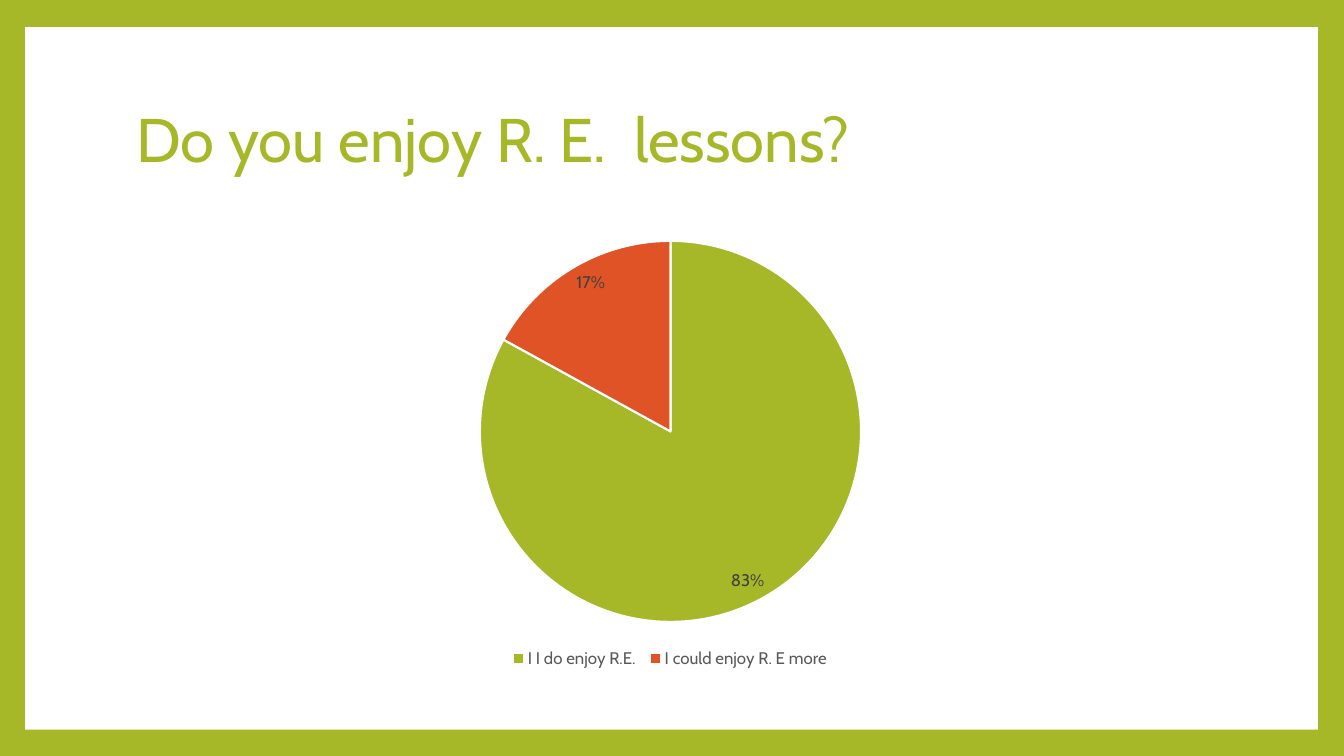
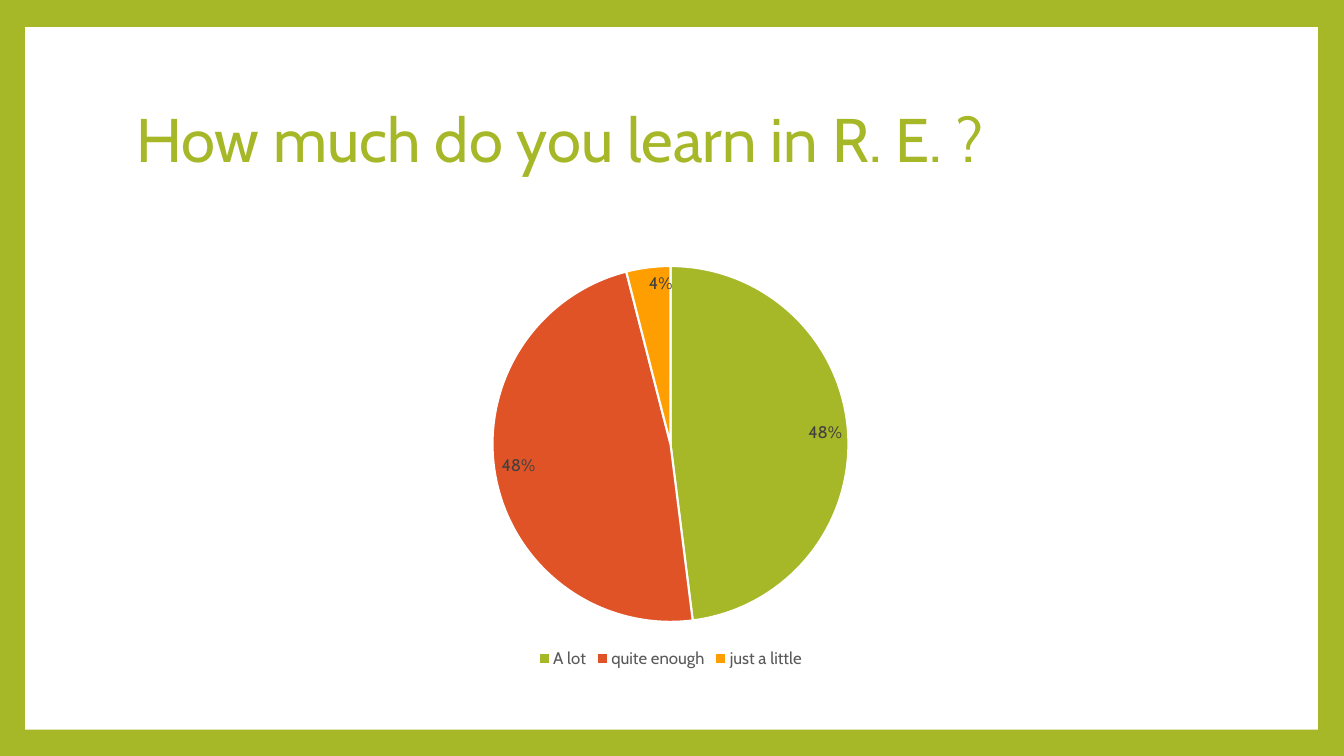
from dataclasses import dataclass

from lxml.etree import SubElement
from pptx import Presentation
from pptx.chart.chart import Chart
from pptx.chart.data import CategoryChartData
from pptx.dml.color import RGBColor
from pptx.enum.chart import XL_CHART_TYPE, XL_LABEL_POSITION, XL_LEGEND_POSITION
from pptx.enum.shapes import MSO_SHAPE
from pptx.enum.text import MSO_ANCHOR, PP_ALIGN
from pptx.oxml.ns import qn
from pptx.presentation import Presentation as Deck
from pptx.slide import Slide
from pptx.text.text import Font
from pptx.util import Pt

PX = 9144  # 100 px to the inch
FONT = "Cabin"
LIME = RGBColor(0xA6, 0xB7, 0x27)
RUST = RGBColor(0xDF, 0x53, 0x27)
AMBER = RGBColor(0xFE, 0x9E, 0x00)
WHITE = RGBColor(0xFF, 0xFF, 0xFF)
BLACK = RGBColor(0x00, 0x00, 0x00)
DARK = RGBColor(0x40, 0x40, 0x40)
GREY = RGBColor(0x59, 0x59, 0x59)
SLICES = (LIME, RUST, AMBER)


@dataclass(frozen=True)
class Box:
    left: int
    top: int
    width: int
    height: int

    def emu(self) -> tuple[int, int, int, int]:
        return (self.left * PX, self.top * PX, self.width * PX, self.height * PX)


@dataclass(frozen=True)
class Poll:
    title: str
    votes: dict[str, int]
    size: int  # pie diameter in px


PANEL = Box(25, 27, 1282, 697)
TITLE = Box(125, 67, 1080, 148)
CHART = Box(125, 225, 1080, 442)
PIE_END = 392  # bottom of the pie, from the top of the chart

POLLS = (
    Poll("Do you enjoy R. E.  lessons?",
         {"I I do enjoy R.E. ": 83, "I could enjoy R. E more": 17}, 378),
    Poll("How much do you learn in R. E. ?",
         {"A lot": 48, "quite enough": 48, "just a little": 4}, 353),
)


def set_font(font: Font, size: int, color: RGBColor) -> None:
    font.name = FONT
    font.size = Pt(size)
    font.color.rgb = color


def add_frame(deck: Deck, slide: Slide) -> None:
    """Give the master a lime ground and a white panel, drawn first on slide."""
    master = deck.slide_master
    ground = master.background.fill
    ground.solid()
    ground.fore_color.rgb = LIME
    panel = slide.shapes.add_shape(MSO_SHAPE.RECTANGLE, *PANEL.emu())
    panel.shadow.inherit = False
    panel.fill.solid()
    panel.fill.fore_color.rgb = WHITE
    panel.line.fill.background()
    master.element.cSld.spTree.insert(2, panel.element)


def set_title(slide: Slide, text: str) -> None:
    title = slide.shapes.title
    title.left, title.top, title.width, title.height = TITLE.emu()
    frame = title.text_frame
    frame.text = text
    frame.word_wrap = True
    frame.vertical_anchor = MSO_ANCHOR.MIDDLE
    line = frame.paragraphs[0]
    line.alignment = PP_ALIGN.LEFT
    line.line_spacing = 0.9
    set_font(line.font, 44, LIME)


def place_pie(chart: Chart, size: int) -> None:
    """Centre the pie in the chart, standing on PIE_END."""
    area = chart.element.find(".//" + qn("c:plotArea"))
    old = area.find(qn("c:layout"))
    if old is not None:
        area.remove(old)
    layout = SubElement(area, qn("c:layout"))
    area.insert(0, layout)
    manual = SubElement(layout, qn("c:manualLayout"))
    rules = {
        "layoutTarget": "inner",
        "xMode": "edge",
        "yMode": "edge",
        "x": (CHART.width - size) / 2 / CHART.width,
        "y": (PIE_END - size) / CHART.height,
        "w": size / CHART.width,
        "h": size / CHART.height,
    }
    for name, value in rules.items():
        SubElement(manual, qn(f"c:{name}")).set("val", str(value))


def add_pie(slide: Slide, poll: Poll) -> None:
    data = CategoryChartData()
    data.categories = list(poll.votes)
    data.add_series("Series 1", list(poll.votes.values()))
    chart = slide.shapes.add_chart(XL_CHART_TYPE.PIE, *CHART.emu(), data).chart
    set_font(chart.font, 10, BLACK)
    chart.has_title = False
    chart.has_legend = True
    chart.legend.position = XL_LEGEND_POSITION.BOTTOM
    chart.legend.include_in_layout = False
    set_font(chart.legend.font, 12, GREY)

    plot = chart.plots[0]
    plot.vary_by_categories = True
    series = plot.series[0]
    for index, color in enumerate(SLICES[:len(poll.votes)]):
        part = series.points[index].format
        part.fill.solid()
        part.fill.fore_color.rgb = color
        part.line.color.rgb = WHITE
        part.line.width = Pt(1.5)
    labels = series.data_labels
    labels.show_value = False
    labels.show_percentage = True
    labels.number_format = "0%"
    labels.number_format_is_linked = False
    labels.position = XL_LABEL_POSITION.INSIDE_END
    set_font(labels.font, 12, DARK)
    place_pie(chart, poll.size)


def main() -> None:
    deck = Presentation()
    deck.slide_width, deck.slide_height = 1333 * PX, 750 * PX
    layout = deck.slide_layouts.get_by_name("Title Only")
    slides = [deck.slides.add_slide(layout) for _ in POLLS]
    add_frame(deck, slides[0])
    for slide, poll in zip(slides, POLLS):
        set_title(slide, poll.title)
        add_pie(slide, poll)
    deck.save("out.pptx")


if __name__ == "__main__":
    main()
